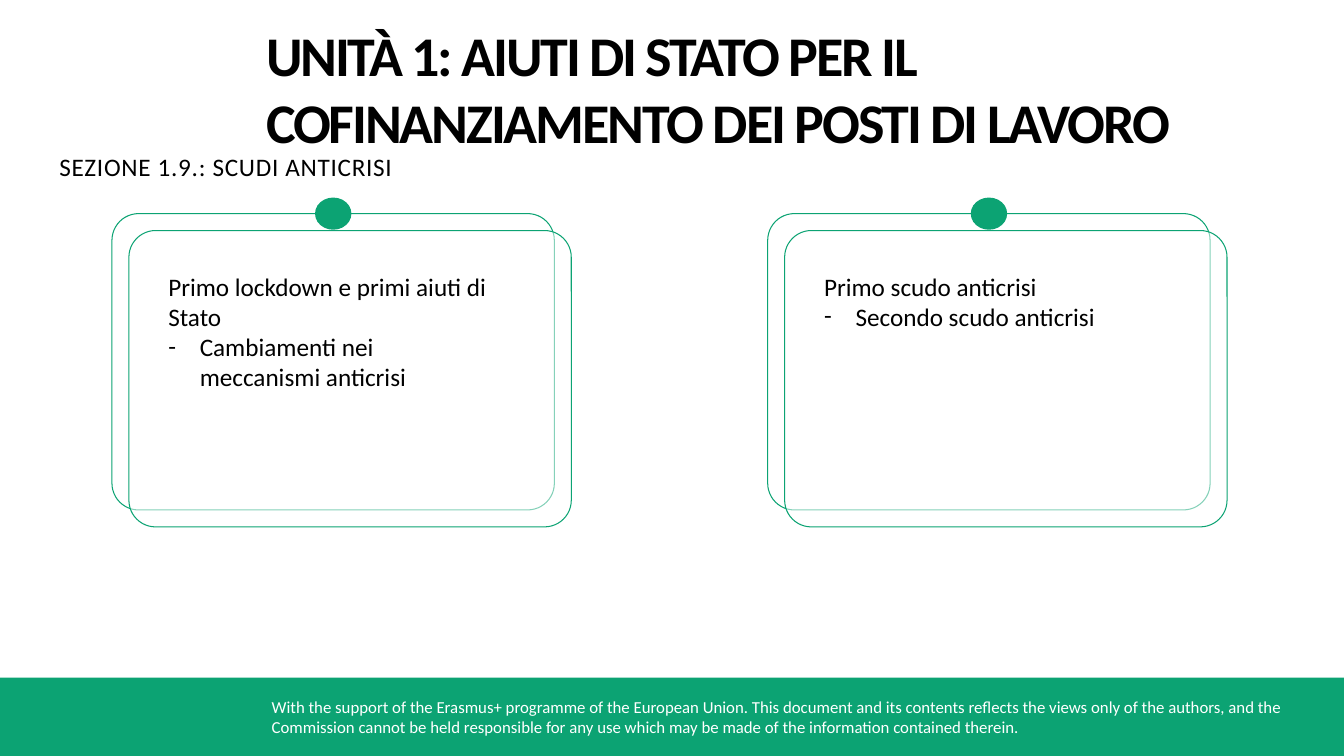
from pptx import Presentation
from pptx.dml.color import RGBColor
from pptx.enum.shapes import MSO_SHAPE
from pptx.enum.text import MSO_ANCHOR, MSO_AUTO_SIZE, PP_ALIGN
from pptx.oxml.ns import qn
from pptx.util import Pt
from lxml.etree import SubElement

GREEN = RGBColor(0x0C, 0xA3, 0x73)
WHITE = RGBColor(255, 255, 255)
BLACK = RGBColor(0, 0, 0)

LEFT, TOP, STEP = 80, 152.6, 468.4
WIDE, HIGH, SHIFT = 316, 211.7, 12.1
DOT_W, DOT_H = 26, 23
CARDS = [
    ("Primo lockdown e primi aiuti di Stato", "Cambiamenti nei meccanismi anticrisi"),
    ("Primo scudo anticrisi", "Secondo scudo anticrisi"),
]
SUPPORT = (
    "With the support of the Erasmus+ programme of the European Union. "
    "This document and its contents reflects the views only of the authors, "
    "and the Commission cannot be held responsible for any use which may be "
    "made of the information contained therein."
)


class Deck:
    def __init__(self, font):
        self.font = font
        self.show = Presentation()
        self.show.slide_width, self.show.slide_height = Pt(960), Pt(540)
        self.slide = self.show.slides.add_slide(self.show.slide_layouts[3])

    def shape(self, kind, x, y, w, h, fill, line=None):
        item = self.slide.shapes.add_shape(kind, Pt(x), Pt(y), Pt(w), Pt(h))
        item.shadow.inherit = False
        item.fill.solid()
        item.fill.fore_color.rgb = fill
        if line is None:
            item.line.fill.background()
        else:
            item.line.color.rgb = line
            item.line.width = Pt(0.75)
        return item

    def card(self, x, y):
        item = self.shape(MSO_SHAPE.ROUNDED_RECTANGLE, x, y, WIDE, HIGH, WHITE, GREEN)
        item.adjustments[0] = 0.09
        tint = item.fill._xPr.find(qn("a:solidFill"))[0]
        SubElement(tint, qn("a:alpha"), val="50000")

    def style(self, para, size, color=BLACK, bold=False, space=0):
        para.alignment = PP_ALIGN.LEFT
        para.space_before = Pt(0)
        para.font.name = self.font
        para.font.size = Pt(size)
        para.font.bold = bold
        para.font.color.rgb = color
        if space:
            for run in para.runs:
                run._r.get_or_add_rPr().set("spc", str(int(space * 100)))

    def place(self, item, x, y, w, h):
        item.left, item.top, item.width, item.height = Pt(x), Pt(y), Pt(w), Pt(h)
        self.slide.shapes._spTree.append(item._element)
        frame = item.text_frame
        frame.word_wrap = True
        frame.auto_size = MSO_AUTO_SIZE.NONE
        frame.vertical_anchor = MSO_ANCHOR.TOP
        return frame

    def title(self, text, x, y, w, h):
        frame = self.place(self.slide.shapes.title, x, y, w, h)
        frame.margin_left = frame.margin_right = frame.margin_bottom = 0
        frame.margin_top = Pt(1)
        frame.text = text
        self.style(frame.paragraphs[0], 40, bold=True, space=-1.5)

    def text(self, text, x, y, w, h, size, color=BLACK, space=0):
        box = self.slide.shapes.add_textbox(Pt(x), Pt(y), Pt(w), Pt(h))
        frame = box.text_frame
        frame.word_wrap = True
        frame.text = text
        self.style(frame.paragraphs[0], size, color, space=space)

    def body(self, spot, lines, x, y, w, h):
        frame = self.place(self.slide.placeholders[spot], x, y, w, h)
        frame.text = "\n".join(lines)
        for rank, para in enumerate(frame.paragraphs):
            props = para._p.get_or_add_pPr()
            hang = Pt(22.5) if rank else 0
            props.set("marL", str(hang))
            props.set("indent", str(-hang))
            if rank:
                props.set("marR", str(Pt(14)))
                SubElement(props, qn("a:buFont"), typeface=self.font)
                SubElement(props, qn("a:buChar"), char="-")
            else:
                SubElement(props, qn("a:buNone"))
            self.style(para, 18)


def main():
    deck = Deck("Calibri")
    deck.shape(MSO_SHAPE.RECTANGLE, 0, 484, 960, 56, GREEN)
    deck.text(SUPPORT, 187, 494, 750, 36, 12, WHITE)
    for col, lines in enumerate(CARDS):
        x = LEFT + col * STEP
        deck.card(x, TOP)
        deck.card(x + SHIFT, TOP + SHIFT)
        deck.shape(MSO_SHAPE.OVAL, x + (WIDE - DOT_W) / 2, TOP - DOT_H / 2,
                   DOT_W, DOT_H, GREEN)
        deck.body(col + 1, lines, x + 33, 190, 250, 94)
    deck.title("UNITÀ 1: AIUTI DI STATO PER IL COFINANZIAMENTO DEI POSTI DI LAVORO",
               190, 13.7, 646.6, 148)
    deck.text("SEZIONE 1.9.: SCUDI ANTICRISI", 35.3, 104.5, 480, 52, 18, space=0.5)
    deck.show.save("out.pptx")


if __name__ == "__main__":
    main()
